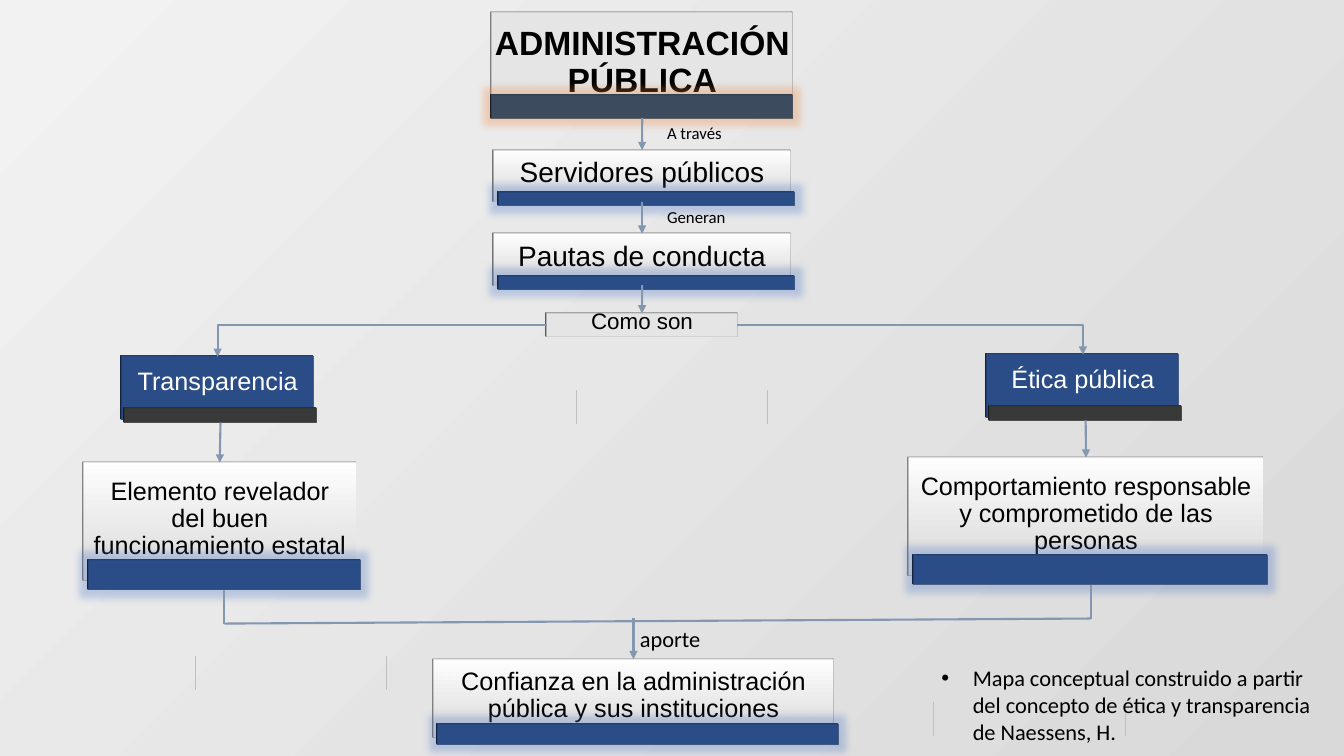
from lxml import etree
from pptx import Presentation
from pptx.dml.color import RGBColor
from pptx.enum.shapes import MSO_CONNECTOR, MSO_SHAPE
from pptx.enum.text import MSO_ANCHOR, PP_ALIGN
from pptx.oxml.ns import qn
from pptx.util import Pt

CENTER, LEFT = PP_ALIGN.CENTER, PP_ALIGN.LEFT
MIDDLE, TOP_ANCHOR = MSO_ANCHOR.MIDDLE, MSO_ANCHOR.TOP
STRAIGHT, ELBOW = MSO_CONNECTOR.STRAIGHT, MSO_CONNECTOR.ELBOW
RECTANGLE = MSO_SHAPE.RECTANGLE
TOP, SIDE_LEFT, BOTTOM, SIDE_RIGHT = range(4)

# Content: key -> style, text, (left, top, width, height), type size
CONCEPTS = {
    "estatal": ("idea", "Elemento revelador del buen funcionamiento estatal", (59.8, 330.5, 194.4, 84.2), "body"),
    "como": ("link", "Como son", (390.5, 223.9, 136.2, 16.5), "note"),
    "titulo": ("title", "ADMINISTRACIÓN PÚBLICA", (351.5, 9.4, 214.5, 75), "title"),
    "etica": ("value", "Ética pública", (705, 253.4, 137, 44.6), "body"),
    "confianza": ("idea", "Confianza en la administración pública y sus instituciones",
                  (309.6, 470.9, 285.8, 56.2), "body"),
    "pautas": ("idea", "Pautas de conducta", (352.8, 167, 211.7, 36.7), "lead"),
    "servidores": ("idea", "Servidores públicos", (352.8, 107.3, 211.7, 36.7), "lead"),
    "transparencia": ("value", "Transparencia", (87, 255, 137, 44.6), "body"),
    "personas": ("idea", "Comportamiento responsable y comprometido de las personas",
                 (649.4, 326.9, 252.7, 84.2), "body"),
}
# text, (left, top, width, height), type size, bulleted
LABELS = [
    ("aporte", (450, 442.8, 110.9, 26.6), "note", False),
    ("Mapa conceptual construido a partir del concepto de ética y transparencia de Naessens, H.",
     (665.3, 470.9, 285.8, 65.5), "note", True),
    ("A través", (469.4, 84.2, 97.9, 21.8), "small", False),
    ("Generan", (469.4, 144, 69.1, 21.8), "small", False),
]
CHAIN = ["titulo", "servidores", "pautas", "como"]
BRANCHES = [("transparencia", "estatal", SIDE_LEFT), ("etica", "personas", SIDE_RIGHT)]
TICKS = [(139.7, 468.7), (275.8, 468.7), (411.8, 278.6), (547.9, 278.6), (666.7, 501.1), (803.5, 501.1)]
TICK_HEIGHT = 24.3
DROP = 24

THEME = {
    "backdrop": ("D9D9D9", "F2F2F2"), "paper": ("FFFFFF", "D9D9D9"),
    "white": "FFFFFF", "black": "000000", "edge": "D9D9D9", "tick": "BFBFBF",
    "arrow": "8497B0", "blue": "2F5597", "slate": "44546A", "dark": "404040",
    "blue_glow": "4472C4", "orange_glow": "ED7D31",
    "heading_font": "Arial", "label_font": "Calibri",
    "sizes": {"title": 24, "lead": 20, "body": 18, "note": 16, "small": 12},
}
# Bar: colour, glow, horizontal shift, top and height as shares of the box
STYLES = {
    "idea": dict(fill="paper", edge=0.25, ink="black", inset=(6, 1, 6, 4.5),
                 bar=("blue", "blue_glow", 3.3, 0.83, 0.25)),
    "value": dict(fill="blue", edge=0, ink="white", inset=(6, 0, 6, 8.5),
                  bar=("dark", None, 2, 0.825, 0.225)),
    "title": dict(fill="white", edge=1, ink="black", inset=(1, 1, 1, 4.5),
                  bar=("slate", "orange_glow", 0, 0.79, 0.21)),
    "link": dict(fill="white", edge=1, ink="black", inset=(1, 1, 1, 4.5), bar=None),
}


def color(name):
    return RGBColor.from_string(THEME[name])


def child(parent, tag, **attributes):
    return etree.SubElement(parent, qn(tag), attributes)


def paint(fill, name):
    value = THEME[name]
    if isinstance(value, str):
        fill.solid()
        fill.fore_color.rgb = color(name)
        return
    fill.gradient()
    fill.gradient_angle = 270 if name == "paper" else 135
    for stop, tone, position in zip(fill.gradient_stops, value, (0, 1)):
        stop.color.rgb = RGBColor.from_string(tone)
        stop.position = position


def write(shape, text, *, size, font, ink="black", bold=False, align=LEFT, anchor=TOP_ANCHOR,
          inset=(7.2, 3.6, 7.2, 3.6), line=1.0, after=0, bullet=False):
    frame = shape.text_frame
    frame.word_wrap = True
    frame.vertical_anchor = anchor
    frame.margin_left, frame.margin_top, frame.margin_right, frame.margin_bottom = map(Pt, inset)
    paragraph = frame.paragraphs[0]
    paragraph.alignment, paragraph.line_spacing, paragraph.space_after = align, line, Pt(after)
    if bullet:
        properties = paragraph._p.get_or_add_pPr()
        properties.set("marL", str(Pt(22.5)))
        properties.set("indent", str(-Pt(22.5)))
        child(properties, "a:buFont", typeface="Arial")
        child(properties, "a:buChar", char="•")
    run = paragraph.add_run()
    run.text = text
    run.font.name, run.font.size, run.font.bold = THEME[font], Pt(size), bold
    run.font.color.rgb = color(ink)


def block(area, fill, edge=0, glow=None):
    shape = slide.shapes.add_shape(RECTANGLE, *map(Pt, area))
    shape.shadow.inherit = False
    paint(shape.fill, fill)
    if edge:
        shape.line.color.rgb = color("edge")
        shape.line.width = Pt(edge)
    else:
        shape.line.fill.background()
    properties = shape._element.spPr
    if glow:
        halo = child(properties.find(qn("a:effectLst")), "a:glow", rad=str(Pt(11)))
        child(child(halo, "a:srgbClr", val=THEME[glow]), "a:alpha", val="30000")
    # Oblique depth towards the top left
    scene = child(properties, "a:scene3d")
    child(scene, "a:camera", prst="obliqueTopLeft")
    child(scene, "a:lightRig", rig="threePt", dir="t")
    child(properties, "a:sp3d", extrusionH=str(Pt(4)), prstMaterial="metal")
    return shape


def connect(start, end, *, kind=STRAIGHT, tone="arrow", width=1.5, arrow=False):
    """Join two ends, each a point or a (shape, side) pair."""
    points = [(0, 0) if hasattr(e[0], "shape_id") else e for e in (start, end)]
    link = slide.shapes.add_connector(kind, *[Pt(v) for point in points for v in point])
    for joint, target in ((link.begin_connect, start), (link.end_connect, end)):
        if hasattr(target[0], "shape_id"):
            joint(*target)
    link.line.color.rgb = color(tone)
    link.line.width = Pt(width)
    if arrow:
        child(link.line._get_or_add_ln(), "a:tailEnd", type="triangle")
    properties = link._element.spPr
    if kind == ELBOW:
        properties.find(qn("a:prstGeom")).set("prst", "bentConnector2")
    child(properties, "a:effectLst")
    return link


presentation = Presentation()
presentation.slide_width, presentation.slide_height = Pt(960), Pt(540)
slide = presentation.slides.add_slide(presentation.slide_layouts[6])
paint(slide.background.fill, "backdrop")

# Faint ticks
for x, y in TICKS:
    connect((x, y), (x, y + TICK_HEIGHT), tone="tick", width=0.25)

# Concepts with the bar at their foot
boxes, bars = {}, {}
for key, (style_name, text, area, size_name) in CONCEPTS.items():
    style = STYLES[style_name]
    size = THEME["sizes"][size_name]
    boxes[key] = block(area, style["fill"], style["edge"])
    write(boxes[key], text, size=size, font="heading_font", ink=style["ink"],
          bold=style_name == "title", align=CENTER, anchor=MIDDLE,
          inset=style["inset"], line=0.9, after=round(size * 0.35, 1))
    if style["bar"]:
        tone, glow, shift, top_share, height_share = style["bar"]
        x, y, w, h = area
        bars[key] = block((x + shift, y + h * top_share, w, h * height_share), tone, glow=glow)

# Central chain
for upper, lower in zip(CHAIN, CHAIN[1:]):
    connect((boxes[upper], BOTTOM), (boxes[lower], TOP), arrow=True)

# Two branches, each dropping to the gathering line
gather = []
for value, idea, side in BRANCHES:
    connect((boxes["como"], side), (boxes[value], TOP), kind=ELBOW, arrow=True)
    connect((bars[value], BOTTOM), (boxes[idea], TOP), arrow=True)
    bar = bars[idea]
    x, y = (bar.left + bar.width / 2) / Pt(1), (bar.top + bar.height) / Pt(1)
    gather.append((x, y + DROP))
    connect((bar, BOTTOM), gather[-1])
connect(*gather)
connect((452.5, 441.5), (boxes["confianza"], TOP), arrow=True)

# Labels and source note
for text, area, size_name, bullet in LABELS:
    write(slide.shapes.add_textbox(*map(Pt, area)), text, size=THEME["sizes"][size_name],
          font="label_font", bullet=bullet)

presentation.save("out.pptx")
